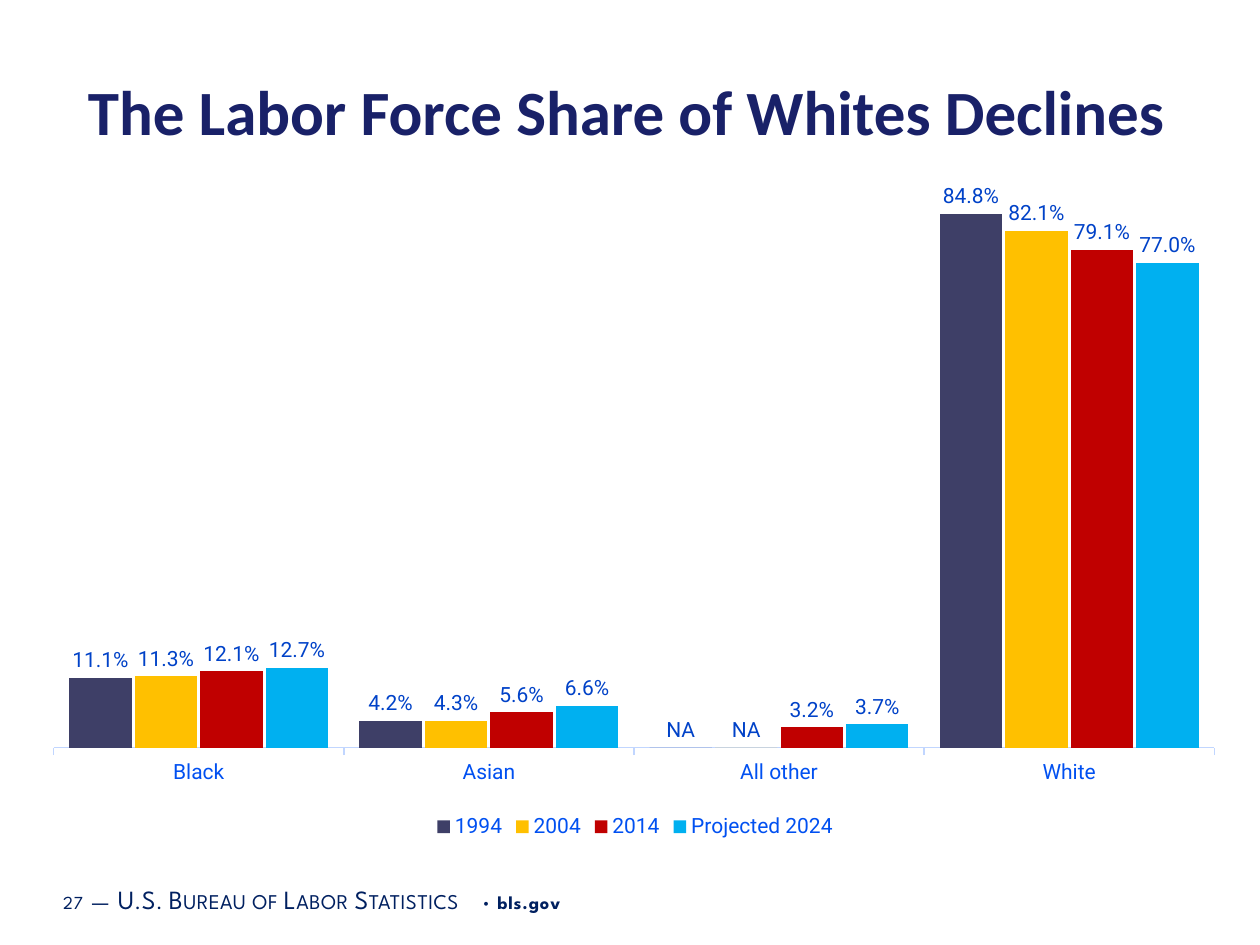
"""Build a slide that charts labor force shares by race over four years."""

from dataclasses import dataclass
from typing import Any

from pptx import Presentation
from pptx.chart.chart import Chart
from pptx.chart.data import CategoryChartData
from pptx.dml.color import RGBColor
from pptx.enum.chart import XL_CHART_TYPE, XL_LABEL_POSITION, XL_LEGEND_POSITION, XL_TICK_MARK
from pptx.enum.text import MSO_ANCHOR, PP_ALIGN
from pptx.oxml import parse_xml
from pptx.oxml.ns import nsdecls
from pptx.slide import Slide
from pptx.util import Pt

COLORS = {
    "title": "192168",
    "footer": "002060",
    "axis_text": "0050F1",
    "axis_line": "C1D6FF",
    "label": "0042C8",
}
CATEGORIES = ("Black", "Asian", "All other", "White")
PLOT_LAYOUT = {"x": 0.007, "y": 0.018, "w": 0.984, "h": 0.839}
PERCENT = "0.0%"


@dataclass
class YearSeries:
    name: str
    color: str
    shares: tuple[float, ...]


@dataclass
class FooterRun:
    text: str
    size: float
    spacing: int = 50
    small_caps: bool = False
    bold: bool = False


SERIES = (
    YearSeries("1994", "3E3F67", (0.111, 0.042, 0, 0.848)),
    YearSeries("2004", "FFC000", (0.113, 0.043, 0, 0.821)),
    YearSeries("2014", "C00000", (0.121, 0.056, 0.032, 0.791)),
    YearSeries("Projected 2024", "00B0F0", (0.127, 0.066, 0.037, 0.77)),
)
FOOTER = (
    FooterRun("27", 10.5),
    FooterRun(" ", 16),
    FooterRun("—", 15, 30, small_caps=True),
    FooterRun(" ", 16),
    FooterRun("U.S. Bureau of Labor Statistics", 15, 30, small_caps=True),
    FooterRun(" • ", 10.5),
    FooterRun("bls.gov", 10.5, bold=True),
)


def set_attrs(obj: Any, values: dict[str, Any]) -> None:
    for name, value in values.items():
        setattr(obj, name, value)


def set_font(font: Any, name: str, size: float, color: str, bold: bool = False) -> None:
    set_attrs(font, {"name": name, "size": Pt(size), "bold": bold})
    font.color.rgb = RGBColor.from_string(COLORS[color])


def add_title(s: Slide, text: str) -> None:
    sp = s.shapes.title
    set_attrs(sp, {"left": Pt(34), "top": Pt(11), "width": Pt(648), "height": Pt(104.5)})
    tf = sp.text_frame
    set_attrs(tf, {"text": text, "vertical_anchor": MSO_ANCHOR.MIDDLE, "word_wrap": True})
    p = tf.paragraphs[0]
    p.alignment = PP_ALIGN.CENTER
    set_font(p.runs[0].font, "Calibri", 36, "title", True)


def add_footer(s: Slide, runs: tuple[FooterRun, ...]) -> None:
    sp = s.shapes.add_textbox(Pt(31), Pt(499), Pt(456), Pt(29))
    tf = sp.text_frame
    margins = {"margin_left": Pt(5), "margin_right": Pt(5), "margin_top": Pt(3), "margin_bottom": Pt(3)}
    set_attrs(tf, {"word_wrap": True, "vertical_anchor": MSO_ANCHOR.MIDDLE, **margins})
    for item in runs:
        r = tf.paragraphs[0].add_run()
        r.text = item.text
        set_font(r.font, "League Spartan", item.size, "footer", item.bold)
        props = r._r.get_or_add_rPr()
        props.set("spc", str(item.spacing))
        if item.small_caps:
            props.set("cap", "small")


def set_plot_layout(chart: Chart, layout: dict[str, float]) -> None:
    plot_area = chart._chartSpace.chart.plotArea
    for old in plot_area.xpath("c:layout"):
        plot_area.remove(old)
    modes = '<c:layoutTarget val="inner"/><c:xMode val="edge"/><c:yMode val="edge"/>'
    sizes = "".join(f'<c:{key} val="{value}"/>' for key, value in layout.items())
    xml = f'<c:layout {nsdecls("c")}><c:manualLayout>{modes}{sizes}</c:manualLayout></c:layout>'
    plot_area.insert(0, parse_xml(xml))


def format_axes(chart: Chart) -> None:
    set_attrs(chart.value_axis, {
        "visible": False, "has_major_gridlines": False, "minimum_scale": 0, "maximum_scale": 0.9,
    })
    axis = chart.category_axis
    set_attrs(axis, {"major_tick_mark": XL_TICK_MARK.OUTSIDE, "has_major_gridlines": False})
    set_font(axis.tick_labels.font, "Roboto", 12, "axis_text")
    axis.format.line.width = Pt(0.75)
    axis.format.line.color.rgb = RGBColor.from_string(COLORS["axis_line"])


def format_series(series: Any, year: YearSeries) -> None:
    series.format.fill.solid()
    series.format.fill.fore_color.rgb = RGBColor.from_string(year.color)
    series.invert_if_negative = False
    labels = series.data_labels
    set_attrs(labels, {
        "show_value": True, "position": XL_LABEL_POSITION.OUTSIDE_END,
        "number_format": PERCENT, "number_format_is_linked": False,
    })
    set_font(labels.font, "Roboto", 12, "label")
    for i, share in enumerate(year.shares):
        if share == 0:
            label = series.points[i].data_label
            label.text_frame.text = "NA"
            set_font(label.text_frame.paragraphs[0].runs[0].font, "Roboto", 12, "label")
            label.position = XL_LABEL_POSITION.OUTSIDE_END


def add_share_chart(s: Slide, years: tuple[YearSeries, ...]) -> None:
    data = CategoryChartData(number_format=PERCENT)
    data.categories = CATEGORIES
    for year in years:
        data.add_series(year.name, year.shares)
    frame = s.shapes.add_chart(
        XL_CHART_TYPE.COLUMN_CLUSTERED, Pt(26), Pt(96.5), Pt(674), Pt(386), data
    )
    chart = frame.chart
    set_attrs(chart, {"has_title": False, "has_legend": True})
    set_font(chart.font, "Roboto", 10, "footer")
    set_attrs(chart.legend, {"position": XL_LEGEND_POSITION.BOTTOM, "include_in_layout": False})
    set_font(chart.legend.font, "Roboto", 12, "axis_text")
    set_attrs(chart.plots[0], {"gap_width": 50, "overlap": -5, "vary_by_categories": False})
    format_axes(chart)
    set_plot_layout(chart, PLOT_LAYOUT)
    for series, year in zip(chart.plots[0].series, years):
        format_series(series, year)


def main() -> None:
    prs = Presentation()
    set_attrs(prs, {"slide_width": Pt(720), "slide_height": Pt(540)})
    s = prs.slides.add_slide(prs.slide_layouts[5])
    add_title(s, "The Labor Force Share of Whites Declines")
    add_footer(s, FOOTER)
    add_share_chart(s, SERIES)
    prs.save("out.pptx")


if __name__ == "__main__":
    main()
